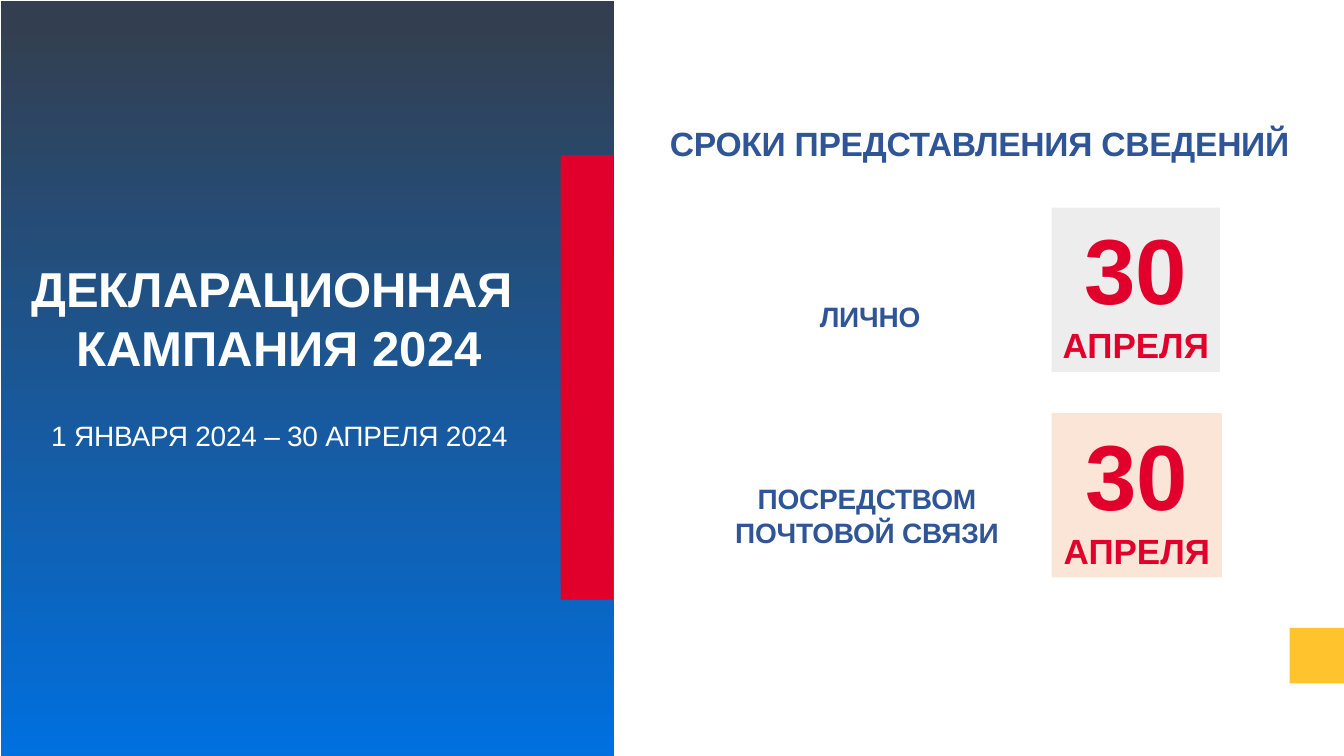
from pptx import Presentation
from pptx.dml.color import RGBColor
from pptx.enum.shapes import MSO_SHAPE
from pptx.enum.text import MSO_ANCHOR, PP_ALIGN
from pptx.util import Inches, Pt

COLORS = {
    "slate": "333F50",
    "blue": "0070DF",
    "red": "E1002B",
    "yellow": "FFC32E",
    "navy": "2F5597",
    "white": "FFFFFF",
    "gray": "EDEDED",
    "peach": "FBE5D6",
}


def add_block(left, top, width, height, color):
    shape = slide.shapes.add_shape(
        MSO_SHAPE.RECTANGLE, Inches(left), Inches(top), Inches(width), Inches(height))
    shape.shadow.inherit = False
    shape.line.fill.background()
    shape.fill.solid()
    shape.fill.fore_color.rgb = RGBColor.from_string(COLORS[color])
    return shape


def write_lines(shape, lines, sizes, color, bold=True, anchor=MSO_ANCHOR.TOP, spacing=0):
    frame = shape.text_frame
    frame.word_wrap = True
    frame.vertical_anchor = anchor
    frame.text = "\n".join(lines)
    for paragraph, size in zip(frame.paragraphs, sizes):
        paragraph.alignment = PP_ALIGN.CENTER
        for run in paragraph.runs:
            run.font.name = "Arial"
            run.font.size = Pt(size)
            run.font.bold = bold
            run.font.color.rgb = RGBColor.from_string(COLORS[color])
            if spacing:
                run._r.get_or_add_rPr().set("spc", str(spacing))


presentation = Presentation()
presentation.slide_width = Inches(13.33)
presentation.slide_height = Inches(7.5)
slide = presentation.slides.add_slide(presentation.slide_layouts[6])

# Left panel with a vertical gradient
panel = add_block(0.01, 0.01, 6.08, 7.49, "blue")
panel.fill.gradient()
panel.fill.gradient_angle = 270
for stop, position, color in zip(panel.fill.gradient_stops, (0.03, 1), ("slate", "blue")):
    stop.position = position
    stop.color.rgb = RGBColor.from_string(COLORS[color])

# Accent blocks
add_block(5.56, 1.54, 0.52, 4.41, "red")
add_block(12.79, 6.23, 0.54, 0.55, "yellow")

# Campaign title
title = slide.shapes.add_textbox(Inches(0), Inches(2.49), Inches(5.54), Inches(1.31))
write_lines(title, ["ДЕКЛАРАЦИОННАЯ ", "КАМПАНИЯ 2024"], [35, 35], "white",
            anchor=MSO_ANCHOR.MIDDLE)

# Period, heading and ways of filing
labels = [
    (0, 4.1, 5.54, 0.44, ["1 ЯНВАРЯ 2024 – 30 АПРЕЛЯ 2024"], 20, "white", False),
    (6.09, 1.17, 7.25, 0.5, ["СРОКИ ПРЕДСТАВЛЕНИЯ СВЕДЕНИЙ"], 24, "navy", True),
    (7.88, 2.92, 1.5, 0.44, ["ЛИЧНО"], 20, "navy", True),
    (6.09, 4.73, 5.09, 0.77, ["ПОСРЕДСТВОМ ", "ПОЧТОВОЙ СВЯЗИ "], 20, "navy", True),
]
for left, top, width, height, lines, size, color, bold in labels:
    label = slide.shapes.add_textbox(
        Inches(left), Inches(top), Inches(width), Inches(height))
    write_lines(label, lines, [size] * len(lines), color, bold, spacing=-20)

# Deadline cards
for top, width, color in [(2.06, 1.67, "gray"), (4.1, 1.69, "peach")]:
    card = add_block(10.43, top, width, 1.63, color)
    write_lines(card, ["30", "АПРЕЛЯ"], [66, 25], "red")

presentation.save("out.pptx")
